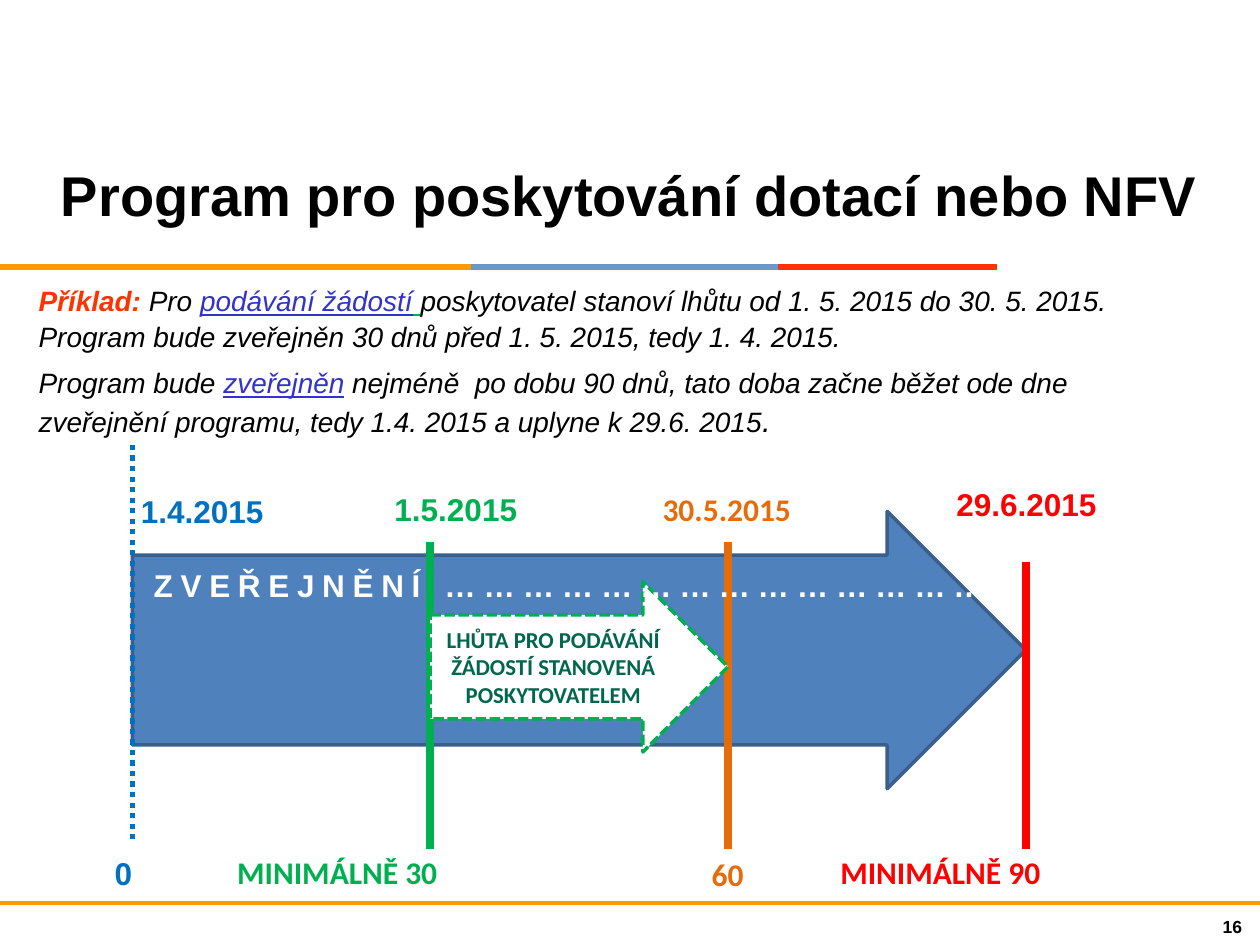
from lxml import etree
from pptx import Presentation
from pptx import util as u
from pptx.dml import color
from pptx.enum import dml, shapes, text
from pptx.oxml import ns

Cm = u.Cm
COLORS = {
    "black": "000000", "white": "FFFFFF", "amber": "FF9900", "steel": "6699CC",
    "vermilion": "FF3300", "link": "3333CC", "blue": "0070C0", "green": "00B050",
    "orange": "E46C0A", "red": "FF0000", "arrow": "4F81BD", "arrow_edge": "3A5F8C",
    "dark_green": "00664D",
}
LEFT, CENTER, RIGHT = text.PP_ALIGN.LEFT, text.PP_ALIGN.CENTER, text.PP_ALIGN.RIGHT
STEP_DAYS = 30


def rgb(name):
    return color.RGBColor.from_string(COLORS[name])


def add_run(paragraph, content, size=18, font="Arial", color_name="black",
            bold=False, italic=False, underline=False, spacing=0):
    run = paragraph.add_run()
    run.text = content
    run.font.size, run.font.name = u.Pt(size), font
    run.font.bold, run.font.italic, run.font.underline = bold, italic, underline
    run.font.color.rgb = rgb(color_name)
    if spacing:
        run.font._element.set("spc", str(round(spacing * 100)))


def add_label(slide, box, content, align=LEFT, wrap=False,
              anchor=text.MSO_ANCHOR.TOP, **font_format):
    frame = slide.shapes.add_textbox(*map(Cm, box)).text_frame
    frame.word_wrap, frame.vertical_anchor = wrap, anchor
    frame.paragraphs[0].alignment = align
    add_run(frame.paragraphs[0], content, **font_format)


def add_filled(slide, kind, box, fill, line, width, dash=None):
    shape = slide.shapes.add_shape(kind, *map(Cm, box))
    shape.shadow.inherit = False
    shape.fill.solid()
    shape.fill.fore_color.rgb = rgb(fill)
    shape.line.color.rgb = rgb(line)
    shape.line.width = u.Pt(width)
    if dash:
        shape.line.dash_style = dash
    return shape


def add_line(slide, start, end, color_name, width, dash=None):
    line = slide.shapes.add_connector(shapes.MSO_CONNECTOR.STRAIGHT,
                                      *map(Cm, (*start, *end)))
    line.line.color.rgb = rgb(color_name)
    line.line.width = u.Pt(width)
    if dash:
        line.line.dash_style = dash
    etree.SubElement(line._element.spPr, ns.qn("a:effectLst"))


def add_header(slide, left, top):
    """Title above a rule made of three coloured stripes."""
    add_label(slide, (left + 0.89, top, 23.6, 2.79),
              "Program pro poskytování dotací nebo NFV", align=CENTER, wrap=True,
              anchor=text.MSO_ANCHOR.MIDDLE, size=32, bold=True)
    for name, width in (("amber", 9.5), ("steel", 6.2), ("vermilion", 4.39)):
        add_filled(slide, shapes.MSO_SHAPE.RECTANGLE,
                   (left, top + 2.82, width, 0.1), name, name, 0.75)
        left += width


def add_footer(slide, left, top, width):
    add_line(slide, (left, top), (left + width, top), "amber", 2.25)
    add_label(slide, (left + width - 9.3, top + 0.13, 9.19, 0.69), "16",
              align=RIGHT, wrap=True, size=10, bold=True)


def add_example(slide, left, top, width, height):
    """Worked example; each run is its text and what differs from the body format."""
    link = {"color_name": "link", "underline": True}
    paragraphs = [
        [("Příklad:", {"color_name": "vermilion", "bold": True}), (" Pro ", {}),
         ("podávání žádostí", link), (" ", {"color_name": "green", "underline": True}),
         ("poskytovatel stanoví lhůtu od 1. 5. 2015 do 30. 5. 2015.", {})],
        [("Program bude zveřejněn 30 dnů před 1. 5. 2015, tedy 1. 4. 2015.", {})],
        [("Program bude ", {}), ("zveřejněn", link),
         (" nejméně  po dobu 90 dnů, tato doba začne běžet ode dne", {})],
        [("zveřejnění programu, tedy 1.4. 2015 a uplyne k 29.6. 2015", {}),
         (".", {"size": 18})],
    ]
    frame = slide.shapes.add_textbox(*map(Cm, (left, top, width, height))).text_frame
    frame.word_wrap = True
    for index, runs in enumerate(paragraphs):
        paragraph = frame.add_paragraph() if index else frame.paragraphs[0]
        paragraph.alignment = text.PP_ALIGN.JUSTIFY
        paragraph.line_spacing = 1.06
        paragraph.space_after = u.Pt(6 if index == 1 else 0)
        for content, changes in runs:
            add_run(paragraph, content, **{"size": 16, "italic": True, **changes})


def add_timeline(slide, left, top, width, height):
    """Publication arrow with a milestone every 30 days."""
    step = width / 3

    def day_x(day):
        return left + step * day / STEP_DAYS

    arrow = add_filled(slide, shapes.MSO_SHAPE.RIGHT_ARROW,
                       (left, top + 1.34, width, 5.59), "arrow", "arrow_edge", 2)
    arrow.adjustments[0] = 0.685

    for day, color_name, line_top in ((30, "green", 1.95), (60, "orange", 1.95),
                                      (90, "red", 2.36)):
        add_line(slide, (day_x(day), top + line_top),
                 (day_x(day), top + height + 0.15), color_name, 4.5)

    window = add_filled(slide, shapes.MSO_SHAPE.RIGHT_ARROW,
                        (day_x(30), top + 2.76, step, 3.43), "white", "green", 2,
                        dml.MSO_LINE.SQUARE_DOT)
    window.adjustments[0] = 0.612
    frame = window.text_frame
    frame.word_wrap, frame.vertical_anchor = True, text.MSO_ANCHOR.MIDDLE
    frame.paragraphs[0].alignment = CENTER
    add_run(frame.paragraphs[0], "LHŮTA PRO PODÁVÁNÍ ŽÁDOSTÍ STANOVENÁ POSKYTOVATELEM",
            size=13, font="Calibri", color_name="dark_green", bold=True)

    # Text, day, colour, font, then offset from the milestone, top and width
    labels = [
        ("1.4.2015", 0, "blue", "Arial", -0.08, 0.83, 3.0),
        ("1.5.2015", 30, "green", "Arial", -0.97, 0.78, 3.0),
        ("30.5.2015", 60, "orange", "Calibri", -1.57, 0.78, 3.12),
        ("29.6.2015", 90, "red", "Arial", -1.65, 0.68, 3.35),
        ("0", 0, "blue", "Arial", -0.61, 8.12, 0.86),
        ("MINIMÁLNĚ 30", 30, "green", "Calibri", -4.14, 8.1, 4.6),
        ("60", 60, "orange", "Calibri", -0.58, 8.15, 1.17),
        ("MINIMÁLNĚ 90", 90, "red", "Calibri", -3.99, 8.1, 4.6),
    ]
    for content, day, color_name, font, offset, label_top, label_width in labels:
        add_label(slide, (day_x(day) + offset, top + label_top, label_width, 1.02),
                  content, font=font, color_name=color_name, bold=True)

    add_label(slide, (left + 0.18, top + 2.31, 18.24, 1.02),
              "ZVEŘEJNĚNÍ ……………………………………", color_name="white", bold=True,
              spacing=4.4)
    add_line(slide, (left, top), (left, top + height), "blue", 3,
             dml.MSO_LINE.ROUND_DOT)


def main():
    presentation = Presentation()
    presentation.slide_width, presentation.slide_height = Cm(25.4), Cm(19.05)
    slide = presentation.slides.add_slide(presentation.slide_layouts[6])
    add_header(slide, 0, 2.51)
    add_footer(slide, 0, 18.21, 25.4)
    add_example(slide, 0.53, 5.56, 23.8, 3.3)
    add_timeline(slide, 2.67, 8.97, 18.01, 8)
    presentation.save("out.pptx")


if __name__ == "__main__":
    main()
